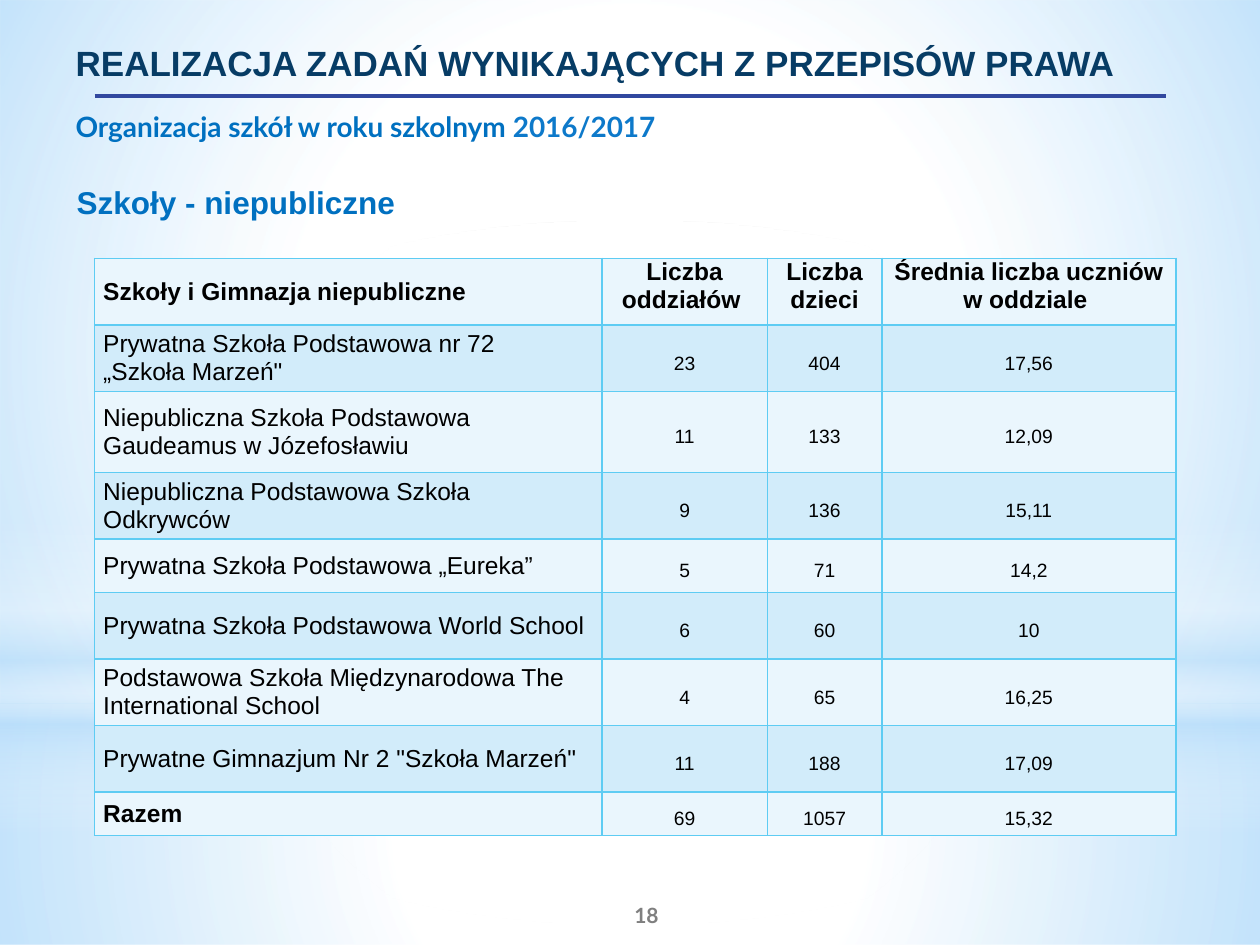
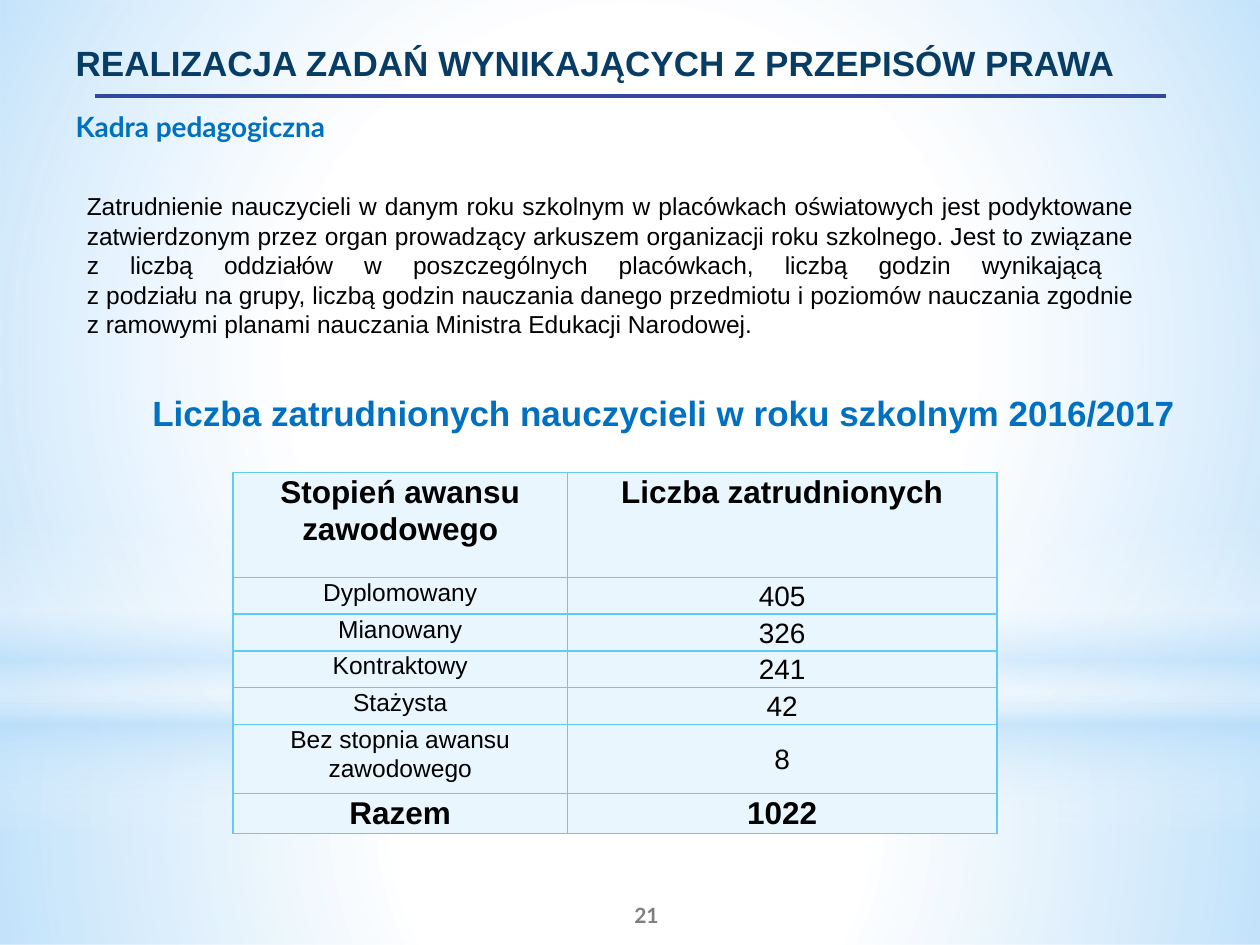
from dataclasses import dataclass, replace
from typing import Callable, NamedTuple

from lxml import etree
from pptx import Presentation
from pptx.dml.color import RGBColor
from pptx.enum.shapes import MSO_CONNECTOR, MSO_SHAPE
from pptx.enum.text import MSO_ANCHOR, MSO_AUTO_SIZE, PP_ALIGN
from pptx.oxml.ns import qn
from pptx.util import Pt

LEFT, MID, JUST = PP_ALIGN.LEFT, PP_ALIGN.CENTER, PP_ALIGN.JUSTIFY
TOP, CENTER = MSO_ANCHOR.TOP, MSO_ANCHOR.MIDDLE
NONE, GROW = MSO_AUTO_SIZE.NONE, MSO_AUTO_SIZE.SHAPE_TO_FIT_TEXT
RECT, OVAL = MSO_SHAPE.RECTANGLE, MSO_SHAPE.OVAL


@dataclass(frozen=True)
class Theme:
    sans: str = "Arial"
    lato: str = "Lato"
    black: str = "000000"
    white: str = "FFFFFF"
    sky: str = "B4DCFA"
    navy: str = "073C65"
    blue: str = "0070C0"
    azure: str = "0D79CA"
    rule: str = "31489F"
    gray: str = "7F7F7F"
    edge: str = "5ECCF3"
    pale: str = "EAF6FD"
    band: str = "D2ECFA"
    title: int = 20
    head: int = 18
    sub: int = 16
    body: int = 14
    foot: int = 12
    small: int = 11


T = Theme()


@dataclass(frozen=True)
class Style:
    size: int = T.body
    color: str = T.black
    bold: bool = False
    name: str = T.sans
    align: PP_ALIGN = LEFT
    space: float = 1.0
    anchor: MSO_ANCHOR = TOP


class Box(NamedTuple):
    left: float
    top: float
    width: float
    height: float


class Stop(NamedTuple):
    at: int
    color: str
    alpha: int = 100


class Wash(NamedTuple):
    kind: MSO_SHAPE
    box: Box
    stops: list[Stop]
    round: bool = True


class Grid(NamedTuple):
    box: Box
    cols: list[float]
    rows: list[float]
    cells: list[tuple[str, ...]]
    style: Callable[[int, int, int], Style]
    fills: tuple[str, ...]


TITLE = Style(T.title, T.navy, True)
SUB = Style(T.sub, T.blue, True, T.lato)
YEAR = replace(SUB, color=T.azure)
FOOT = Style(T.foot, T.gray, True, T.lato, MID, anchor=CENTER)
HEAD = Style(T.head, T.blue, True)
LEAD = replace(HEAD, size=T.title)
BODY = Style(align=JUST)

WASHES = [
    Wash(RECT, Box(0, 402, 720, 138),
         [Stop(0, T.white, 91), Stop(37, T.white, 76), Stop(100, T.sky, 79)]),
    Wash(RECT, Box(0, 0, 720, 402),
         [Stop(0, T.white, 89), Stop(48, T.white, 62), Stop(100, T.sky, 79)]),
    Wash(RECT, Box(0, 296.5, 720, 180),
         [Stop(0, T.white, 0), Stop(29, T.white, 30), Stop(45, T.sky, 40),
          Stop(55, T.white, 26), Stop(65, T.sky, 60), Stop(100, T.white, 0)], False),
    Wash(OVAL, Box(0, 126, 720, 402), [Stop(0, T.white), Stop(56, T.white, 0)]),
]


def school_style(row: int, col: int, last: int) -> Style:
    if col == 0:
        return Style(bold=row in (0, last), anchor=CENTER)
    if row == 0:
        return Style(bold=True, align=MID)
    return Style(T.small, align=MID, space=1.5, anchor=CENTER)


def staff_style(row: int, col: int, last: int) -> Style:
    base = Style(align=MID, space=1.06)
    if row in (0, last):
        return replace(base, size=T.head, bold=True)
    return replace(base, size=T.sub, anchor=CENTER) if col else base


SCHOOLS = Grid(
    Box(54, 147.6, 618, 329), [290, 94.5, 65.5, 168], [38, 38, 46.5, 38, 30.5, 38, 38, 38, 25],
    [("Szkoły i Gimnazja niepubliczne", "Liczba oddziałów ", "Liczba dzieci",
      "Średnia liczba uczniów w oddziale "),
     ('Prywatna Szkoła Podstawowa nr 72\n„Szkoła Marzeń"', "23", "404", "17,56"),
     ("Niepubliczna Szkoła Podstawowa Gaudeamus w Józefosławiu", "11", "133", "12,09"),
     ("Niepubliczna Podstawowa Szkoła Odkrywców", "9", "136", "15,11"),
     ("Prywatna Szkoła Podstawowa „Eureka”", "5", "71", "14,2"),
     ("Prywatna Szkoła Podstawowa World School", "6", "60", "10"),
     ("Podstawowa Szkoła Międzynarodowa The International School", "4", "65", "16,25"),
     ('Prywatne Gimnazjum Nr 2 "Szkoła Marzeń"', "11", "188", "17,09"),
     ("Razem", "69", "1057", "15,32")],
    school_style, (T.pale, T.band))

STAFF = Grid(
    Box(133.2, 270, 436.5, 206), [191, 245.5], [60, 21, 21, 21, 21, 39.5, 23],
    [("Stopień awansu zawodowego", "Liczba zatrudnionych"),
     ("Dyplomowany", "405"),
     ("Mianowany", "326"),
     ("Kontraktowy", "241"),
     ("Stażysta", "42"),
     ("Bez stopnia awansu zawodowego", "8"),
     ("Razem", "1022")],
    staff_style, (T.pale,))

STAFF_TEXT = (
    "Zatrudnienie nauczycieli w danym roku szkolnym w placówkach oświatowych jest "
    "podyktowane zatwierdzonym przez organ prowadzący arkuszem organizacji roku szkolnego. "
    "Jest to związane z liczbą oddziałów w poszczególnych placówkach, liczbą godzin "
    "wynikającą \vz podziału na grupy, liczbą godzin nauczania danego przedmiotu i poziomów "
    "nauczania zgodnie z ramowymi planami nauczania Ministra Edukacji Narodowej.")


def put(target, values: dict) -> None:
    for key, val in values.items():
        setattr(target, key, val)


def points(box: Box) -> list[Pt]:
    return [Pt(n) for n in box]


def node(parent, tag: str, **attrs):
    return etree.SubElement(parent, qn(tag), {k: str(v) for k, v in attrs.items()})


def dress(font, style: Style) -> None:
    put(font, dict(size=Pt(style.size), bold=style.bold, name=style.name))
    font.color.rgb = RGBColor.from_string(style.color)


def write(frame, text: str, style: Style) -> None:
    frame.text = text
    for para in frame.paragraphs:
        put(para, dict(alignment=style.align, line_spacing=style.space))
        for run in para.runs:
            dress(run.font, style)


def add_text(slide, box: Box, text: str, style: Style, wrap: bool = True, size=GROW) -> None:
    frame = slide.shapes.add_textbox(*points(box)).text_frame
    put(frame, dict(word_wrap=wrap, auto_size=size, vertical_anchor=style.anchor))
    write(frame, text, style)


def add_wash(slide, wash: Wash):
    """Draw a shape whose gradient fades by colour and opacity."""
    shape = slide.shapes.add_shape(wash.kind, *points(wash.box))
    shape.shadow.inherit = False
    shape.line.fill.background()
    grad = etree.Element(qn("a:gradFill"), rotWithShape="1")
    stops = node(grad, "a:gsLst")
    for stop in wash.stops:
        tint = node(node(stops, "a:gs", pos=stop.at * 1000), "a:srgbClr", val=stop.color)
        node(tint, "a:alpha", val=stop.alpha * 1000)
    if wash.round:
        node(node(grad, "a:path", path="circle"), "a:fillToRect",
             l=50000, t=50000, r=50000, b=50000)
    else:
        node(grad, "a:lin", ang=5400000, scaled=0)
    shape.element.spPr.find(qn("a:prstGeom")).addnext(grad)
    return shape


def set_back(slide, layout) -> None:
    """Draw the washes once and move them to the back of the layout."""
    for i, wash in enumerate(WASHES):
        part = add_wash(slide, wash).element
        part.xpath(".//p:cNvPr")[0].set("id", str(100 + i))
        layout.shapes.element.insert(2 + i, part)


def add_rule(slide) -> None:
    line = slide.shapes.add_connector(MSO_CONNECTOR.STRAIGHT, Pt(54), Pt(54.7), Pt(666), Pt(54.7))
    line.line.color.rgb = RGBColor.from_string(T.rule)
    line.line.width = Pt(2.25)
    node(line.element.spPr, "a:effectLst")


def set_title(slide, sub: list[tuple[str, Style]]) -> None:
    shape = slide.shapes.title
    put(shape, dict(zip(("left", "top", "width", "height"), points(Box(36, 20.2, 648, 62.6)))))
    frame = shape.text_frame
    put(frame, dict(word_wrap=True, auto_size=NONE, vertical_anchor=TOP))
    write(frame, "REALIZACJA ZADAŃ WYNIKAJĄCYCH Z PRZEPISÓW PRAWA", TITLE)
    para = frame.add_paragraph()
    put(para, dict(alignment=LEFT, space_before=Pt(15)))
    for text, style in sub:
        run = para.add_run()
        run.text = text
        dress(run.font, style)
    for para in frame.paragraphs:
        put(para.element if hasattr(para, "element") else para._p.get_or_add_pPr(),
            dict(marL=Pt(14.4), indent=0))


def add_edges(cell) -> None:
    props = cell._tc.get_or_add_tcPr()
    for side in "LRTB":
        line = node(props, f"a:ln{side}", w=Pt(1))
        node(node(line, "a:solidFill"), "a:srgbClr", val=T.edge)


def add_grid(slide, grid: Grid) -> None:
    last = len(grid.rows) - 1
    table = slide.shapes.add_table(
        len(grid.rows), len(grid.cols), *points(grid.box)).table
    put(table, dict(first_row=False, horz_banding=False))
    for col, width in zip(table.columns, grid.cols):
        col.width = Pt(width)
    for r, (row, height) in enumerate(zip(table.rows, grid.rows)):
        row.height = Pt(height)
        for c, cell in enumerate(row.cells):
            style = grid.style(r, c, last)
            put(cell, dict(margin_left=Pt(5), margin_right=Pt(5), margin_top=0,
                           margin_bottom=0, vertical_anchor=style.anchor))
            write(cell.text_frame, grid.cells[r][c], style)
            add_edges(cell)
            cell.fill.solid()
            cell.fill.fore_color.rgb = RGBColor.from_string(grid.fills[r % len(grid.fills)])


def add_page(deck, layout, number: str, sub: list[tuple[str, Style]]):
    slide = deck.slides.add_slide(layout)
    add_text(slide, Box(297.4, 508.3, 144, 28.8), number, FOOT, size=NONE)
    set_title(slide, sub)
    add_rule(slide)
    return slide


def main() -> None:
    deck = Presentation()
    put(deck, dict(slide_width=Pt(720), slide_height=Pt(540)))
    layout = deck.slide_layouts.get_by_name("Title Only")

    page = add_page(deck, layout, "18",
                    [("Organizacja szkół w roku szkolnym ", SUB), ("2016/2017", YEAR)])
    set_back(page, layout)
    add_text(page, Box(36.7, 100.8, 198, 29), "Szkoły - niepubliczne", HEAD, wrap=False)
    add_grid(page, SCHOOLS)

    page = add_page(deck, layout, "21", [("Kadra pedagogiczna", SUB)])
    add_text(page, Box(42.5, 105.8, 612.7, 92), STAFF_TEXT, BODY)
    add_text(page, Box(80, 220.3, 604, 31.7),
             "Liczba zatrudnionych nauczycieli w roku szkolnym 2016/2017", LEAD, wrap=False)
    add_grid(page, STAFF)

    deck.save("out.pptx")


if __name__ == "__main__":
    main()
